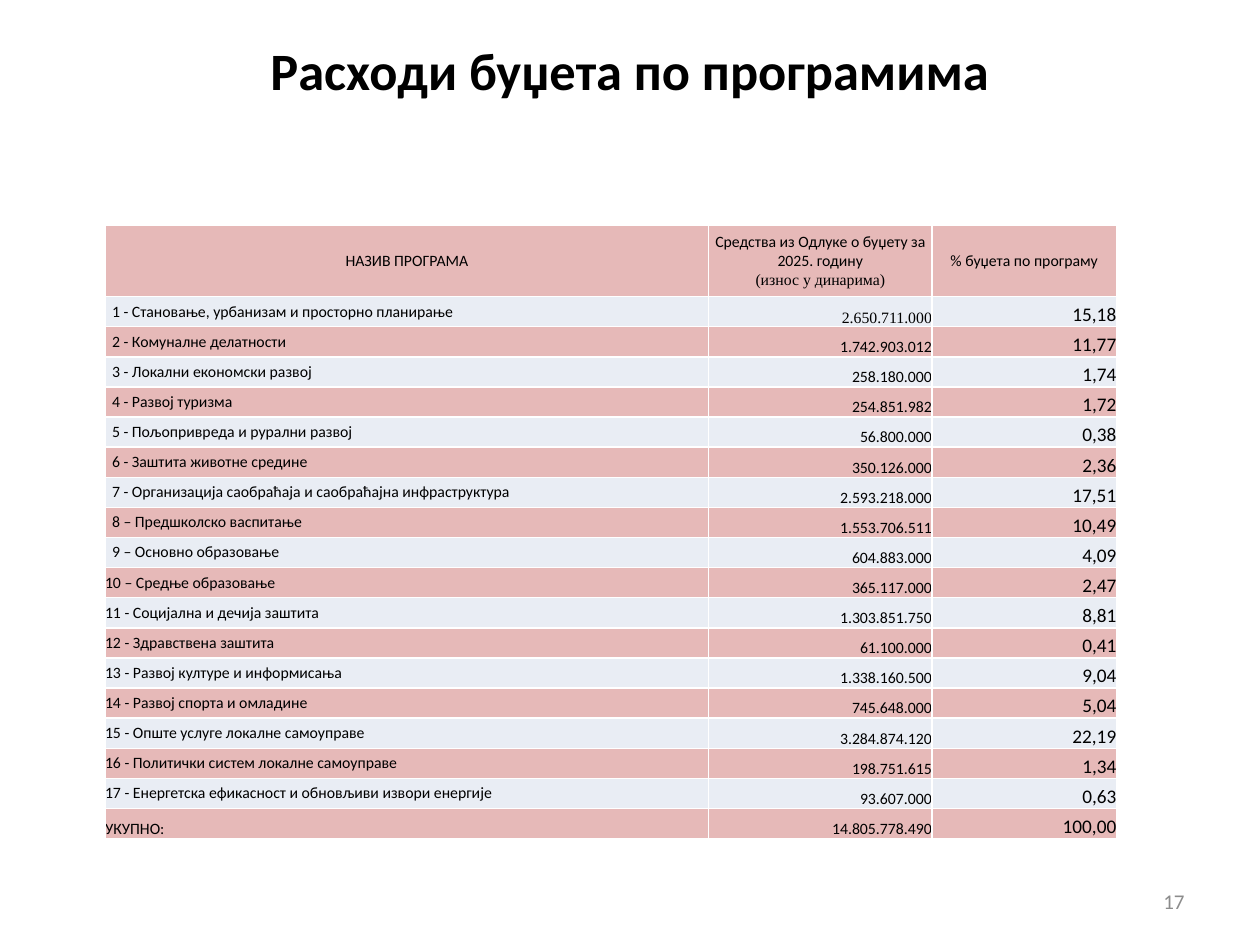
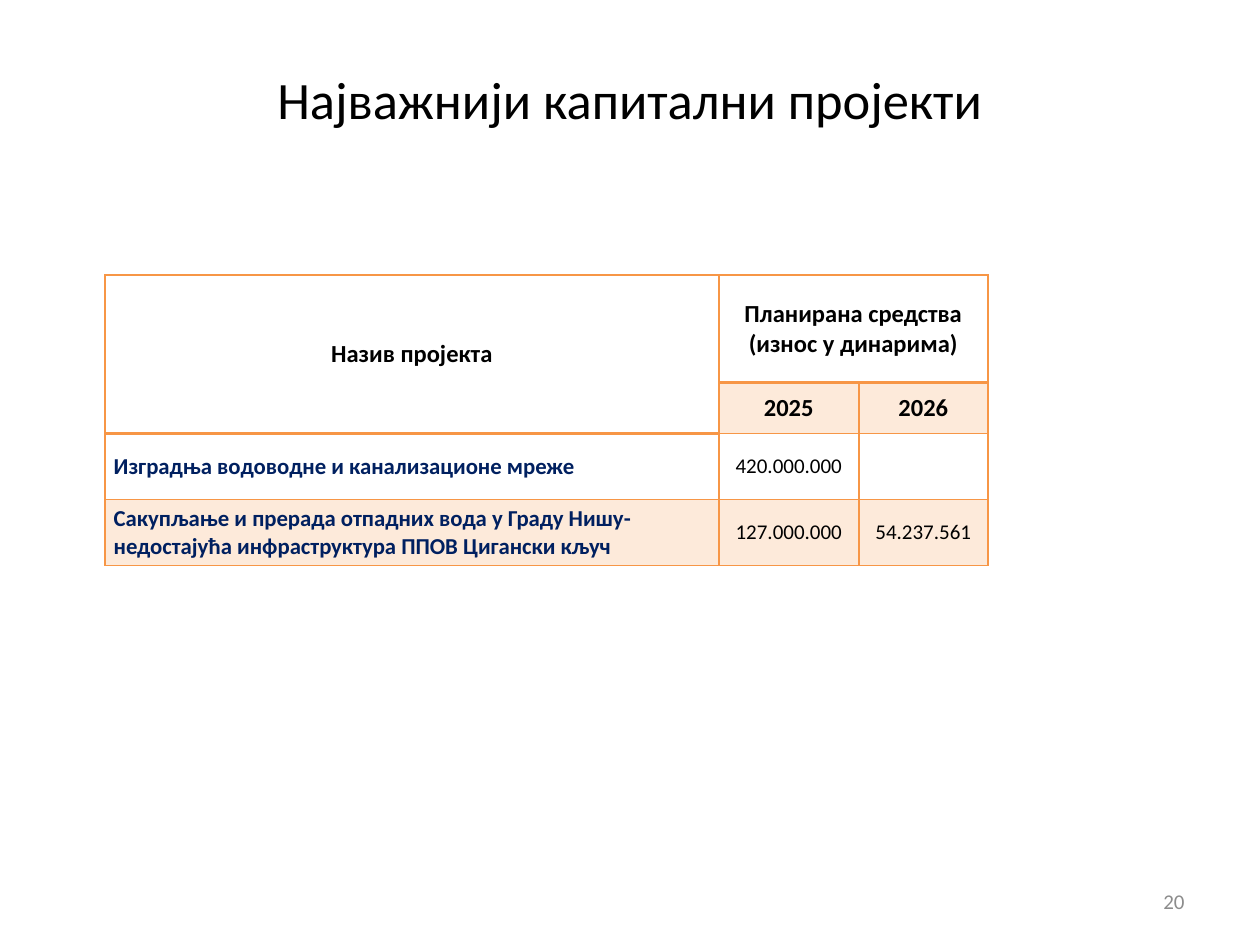
from lxml.etree import SubElement
from pptx import Presentation
from pptx.dml.color import RGBColor
from pptx.enum.text import MSO_ANCHOR, PP_ALIGN
from pptx.oxml.ns import qn
from pptx.util import Pt

HUES = {"ink": "000000", "white": "FFFFFF", "gray": "8C8C8C", "rose": "E6B9B8",
        "ice": "E9EDF4", "orange": "F79646", "peach": "FDEADA", "navy": "002060"}
SANS, SERIF = "Calibri", "Times New Roman"
ALIGN = {"l": PP_ALIGN.LEFT, "c": PP_ALIGN.CENTER, "r": PP_ALIGN.RIGHT}
ANCHOR = {"m": MSO_ANCHOR.MIDDLE, "b": MSO_ANCHOR.BOTTOM}


def write(box, text, size=12, fonts=(SANS,), hue="ink", bold=False,
          align="l", anchor="m", pad=(7.2, 3.6)):
    """Fill a text frame or table cell; the last font serves all further lines."""
    frame = getattr(box, "text_frame", box)
    frame.word_wrap = True
    box.vertical_anchor = ANCHOR[anchor]
    box.margin_left = box.margin_right = Pt(pad[0])
    box.margin_top = box.margin_bottom = Pt(pad[1])
    for i, line in enumerate(text.split("\n")):
        para = frame.add_paragraph() if i else frame.paragraphs[0]
        para.alignment = ALIGN[align]
        run = para.add_run()
        run.text = line
        font = run.font
        font.size, font.bold = Pt(size), bold
        font.name = fonts[min(i, len(fonts) - 1)]
        font.color.rgb = RGBColor.from_string(HUES[hue])


def paint(cell, fill, edge, top=1, bottom=1):
    """Set the fill (None for clear) and the four borders of a cell."""
    if fill:
        cell.fill.solid()
        cell.fill.fore_color.rgb = RGBColor.from_string(HUES[fill])
    else:
        cell.fill.background()
    props = cell._tc.get_or_add_tcPr()
    sides = {"a:lnL": 1, "a:lnR": 1, "a:lnT": top, "a:lnB": bottom}
    for i, (tag, width) in enumerate(sides.items()):
        line = SubElement(props, qn(tag), w=str(Pt(width)))
        SubElement(SubElement(line, qn("a:solidFill")), qn("a:srgbClr"), val=HUES[edge])
        props.insert(i, line)


deck = Presentation()
deck.slide_width, deck.slide_height = Pt(720), Pt(540)

# Titles, page numbers and empty tables: (title, bold, place, page, table top, columns, rows)
plans = [
    ("Расходи буџета по програмима", True, (53.5, 9.5, 613, 61), "17",
     128.5, (345, 127.5, 105.5), (41,) + (17.22,) * 18),
    ("Најважнији капитални пројекти", False, (36, 21.6, 648, 69), "20",
     157, (350.75, 80, 73.75), (61.75, 29, 37.75, 37.75)),
]
grids = []
for title, bold, place, page, top, cols, rows in plans:
    slide = deck.slides.add_slide(deck.slide_layouts[6])
    head = slide.shapes.add_textbox(*map(Pt, place))
    write(head.text_frame, title, size=30, bold=bold, align="c")
    foot = slide.shapes.add_textbox(Pt(516), Pt(500.5), Pt(168), Pt(28.75))
    write(foot.text_frame, page, hue="gray", align="r")
    grid = slide.shapes.add_table(len(rows), len(cols), Pt(60), Pt(top),
                                  Pt(sum(cols)), Pt(sum(rows))).table
    grid.first_row = grid.horz_banding = False
    for col, width in zip(grid.columns, cols):
        col.width = Pt(width)
    for row, height in zip(grid.rows, rows):
        row.height = Pt(height)
    grids.append(grid)
budget, works = grids

# Spending by programme
heads = ["НАЗИВ ПРОГРАМА",
         "Средства из Одлуке о буџету за 2025. годину\n(износ у динарима)",
         "% буџета по програму"]
items = [
    ("1 - Становање, урбанизам и просторно планирање", "2.650.711.000", "15,18"),
    ("2 - Комуналне делатности", "1.742.903.012", "11,77"),
    ("3 - Локални економски развој", "258.180.000", "1,74"),
    ("4 - Развој туризма", "254.851.982", "1,72"),
    ("5 - Пољопривреда и рурални развој", "56.800.000", "0,38"),
    ("6 - Заштита животне средине", "350.126.000", "2,36"),
    ("7 - Организација саобраћаја и саобраћајна инфраструктура", "2.593.218.000", "17,51"),
    ("8 – Предшколско васпитање", "1.553.706.511", "10,49"),
    ("9 – Основно образовање", "604.883.000", "4,09"),
    ("10 – Средње образовање", "365.117.000", "2,47"),
    ("11 - Социјална и дечија заштита", "1.303.851.750", "8,81"),
    ("12 - Здравствена заштита", "61.100.000", "0,41"),
    ("13 - Развој културе и информисања", "1.338.160.500", "9,04"),
    ("14 - Развој спорта и омладине", "745.648.000", "5,04"),
    ("15 - Опште услуге локалне самоуправе", "3.284.874.120", "22,19"),
    ("16 - Политички систем локалне самоуправе", "198.751.615", "1,34"),
    ("17 - Енергетска ефикасност и обновљиви извори енергије", "93.607.000", "0,63"),
    ("УКУПНО:", "14.805.778.490", "100,00"),
]
for c, text in enumerate(heads):
    write(budget.cell(0, c), text, size=9, fonts=(SANS, SERIF), align="c", pad=(0, 0))
for r, (name, sum_, share) in enumerate(items, 1):
    label = budget.cell(r, 0)
    write(label, name, size=9, anchor="b" if r == len(items) else "m", pad=(0, 0))
    if r < 10:
        label.margin_left = Pt(4)
    write(budget.cell(r, 1), sum_, size=9, fonts=(SERIF if r == 1 else SANS,),
          align="r", anchor="b", pad=(0, 0))
    write(budget.cell(r, 2), share, size=11, align="r", anchor="b", pad=(0, 0))
for r in range(len(items) + 1):
    for c in range(3):
        paint(budget.cell(r, c), "ice" if r % 2 else "rose", "white")

# Capital projects
works.cell(0, 0).merge(works.cell(1, 0))
works.cell(0, 1).merge(works.cell(0, 2))
for r, c, text in [(0, 0, "Назив пројекта"),
                   (0, 1, "Планирана средства\n(износ у динарима)"),
                   (1, 1, "2025"), (1, 2, "2026")]:
    write(works.cell(r, c), text, size=14, bold=True, align="c", pad=(5, 0))
jobs = [
    ("Изградња водоводне и канализационе мреже", "420.000.000", ""),
    ("Сакупљање и прерада отпадних вода у Граду Нишу-недостајућа "
     "инфраструктура ППОВ Цигански кључ", "127.000.000", "54.237.561"),
]
for r, (name, *sums) in enumerate(jobs, 2):
    write(works.cell(r, 0), name, size=13, hue="navy", bold=True, pad=(5, 0))
    for c, text in enumerate(sums, 1):
        if text:
            write(works.cell(r, c), text, align="c", pad=(5, 0))
thick = {(0, 0), (0, 1), (0, 2), (1, 0)}
for r in range(4):
    for c in range(3):
        tint = "peach" if r % 2 and (r, c) != (1, 0) else None
        paint(works.cell(r, c), tint, "orange",
              top=2 if (r - 1, c) in thick else 1, bottom=2 if (r, c) in thick else 1)

deck.save("out.pptx")
